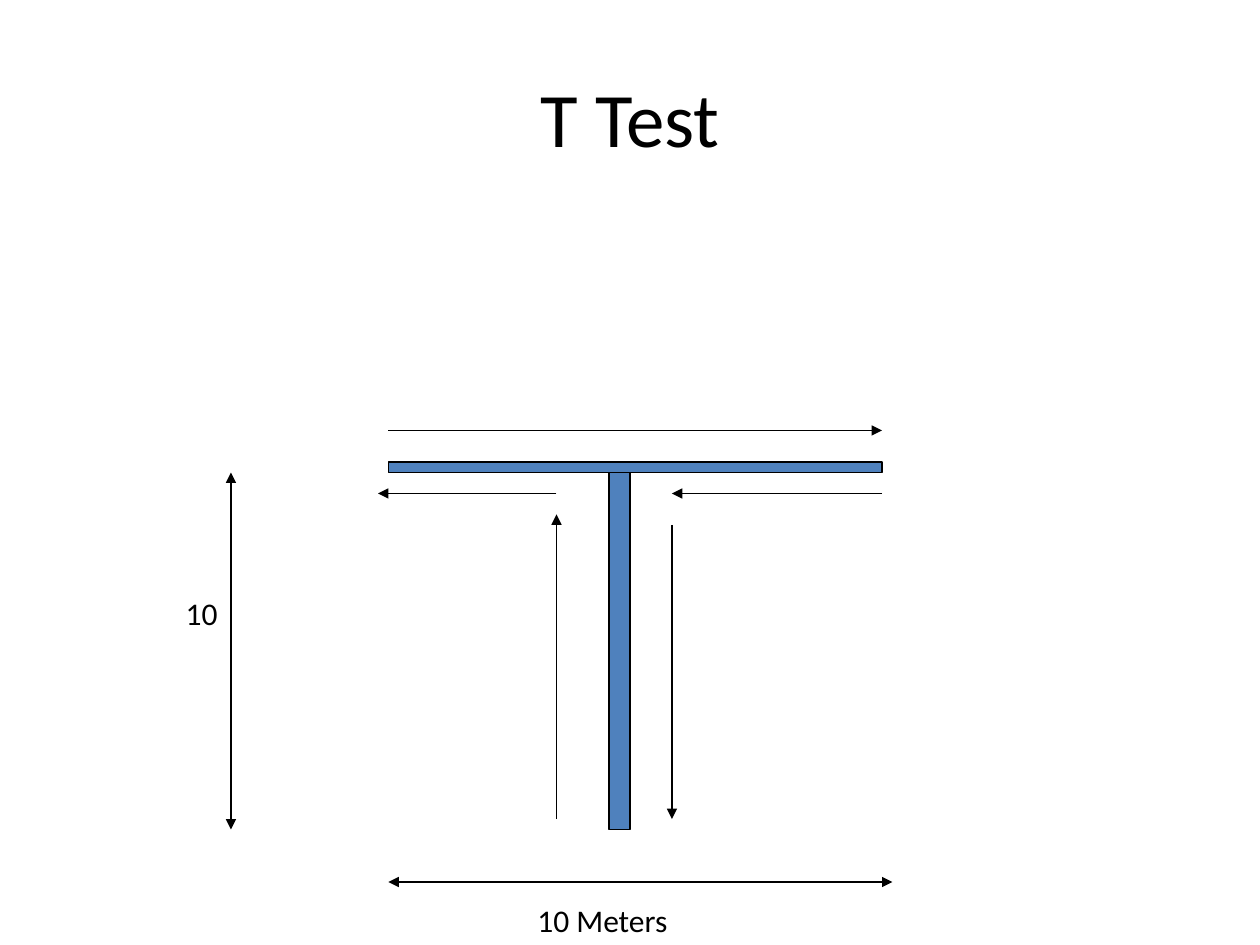
from typing import NamedTuple

from lxml.etree import SubElement
from pptx import Presentation
from pptx.dml.color import RGBColor
from pptx.enum.shapes import MSO_CONNECTOR, MSO_SHAPE
from pptx.enum.text import MSO_ANCHOR, PP_ALIGN
from pptx.oxml.ns import qn
from pptx.slide import Slide
from pptx.util import Inches, Length, Pt

BLACK = RGBColor(0x00, 0x00, 0x00)
BLUE = RGBColor(0x4F, 0x81, 0xBD)
FONT = "Calibri"
LINE_WIDTH = Pt(0.75)
CELLS_PER_INCH = 12


class Bar(NamedTuple):
    column: float
    row: float
    columns: float
    rows: float


class Arrow(NamedTuple):
    start: tuple[float, float]
    end: tuple[float, float]
    double: bool = False


class Label(NamedTuple):
    text: str
    column: float
    row: float
    columns: float
    rows: float
    size: int = 18
    wrap: bool = False
    alignment: PP_ALIGN = PP_ALIGN.LEFT
    anchor: MSO_ANCHOR = MSO_ANCHOR.TOP


# The T spans columns 37 to 84 and rows 44 to 79.
BARS = [
    Bar(58, 45, 2, 34),
    Bar(37, 44, 47, 1),
]
DIMENSIONS = [
    Arrow((22, 45), (22, 79), double=True),
    Arrow((37, 84), (85, 84), double=True),
]
RUNNING_ROUTE = [
    Arrow((53, 78), (53, 49)),
    Arrow((53, 47), (36, 47)),
    Arrow((37, 41), (84, 41)),
    Arrow((84, 47), (64, 47)),
    Arrow((64, 50), (64, 78)),
]
LABELS = [
    Label("T Test", 6, 3.6, 108, 15, 44, True, PP_ALIGN.CENTER, MSO_ANCHOR.MIDDLE),
    Label("10 Meters", 50, 85.2, 15.7, 4.8),
    Label("10", 16.5, 56, 5.4, 4.8),
]


def grid(cells: float) -> Length:
    """Convert grid cells to a length."""
    return Inches(cells / CELLS_PER_INCH)


def draw_bar(slide: Slide, bar: Bar) -> None:
    shape = slide.shapes.add_shape(MSO_SHAPE.RECTANGLE, *map(grid, bar))
    shape.shadow.inherit = False
    shape.fill.solid()
    shape.fill.fore_color.rgb = BLUE
    shape.line.color.rgb = BLACK
    shape.line.width = LINE_WIDTH


def draw_arrow(slide: Slide, arrow: Arrow) -> None:
    connector = slide.shapes.add_connector(
        MSO_CONNECTOR.STRAIGHT, *map(grid, arrow.start + arrow.end)
    )
    connector.line.color.rgb = BLACK
    connector.line.width = LINE_WIDTH
    properties = connector.line._get_or_add_ln()
    if arrow.double:
        SubElement(properties, qn("a:headEnd"), type="triangle")
    SubElement(properties, qn("a:tailEnd"), type="triangle")
    SubElement(connector._element.spPr, qn("a:effectLst"))


def draw_label(slide: Slide, label: Label) -> None:
    box = slide.shapes.add_textbox(
        grid(label.column), grid(label.row), grid(label.columns), grid(label.rows)
    )
    frame = box.text_frame
    frame.word_wrap = label.wrap
    frame.vertical_anchor = label.anchor
    paragraph = frame.paragraphs[0]
    paragraph.alignment = label.alignment
    run = paragraph.add_run()
    run.text = label.text
    run.font.name = FONT
    run.font.size = Pt(label.size)
    run.font.color.rgb = BLACK


def main() -> None:
    presentation = Presentation()
    presentation.slide_width = Inches(10)
    presentation.slide_height = Inches(7.5)
    slide = presentation.slides.add_slide(presentation.slide_layouts[6])
    for bar in BARS:
        draw_bar(slide, bar)
    for arrow in DIMENSIONS + RUNNING_ROUTE:
        draw_arrow(slide, arrow)
    for label in LABELS:
        draw_label(slide, label)
    presentation.save("out.pptx")


if __name__ == "__main__":
    main()
